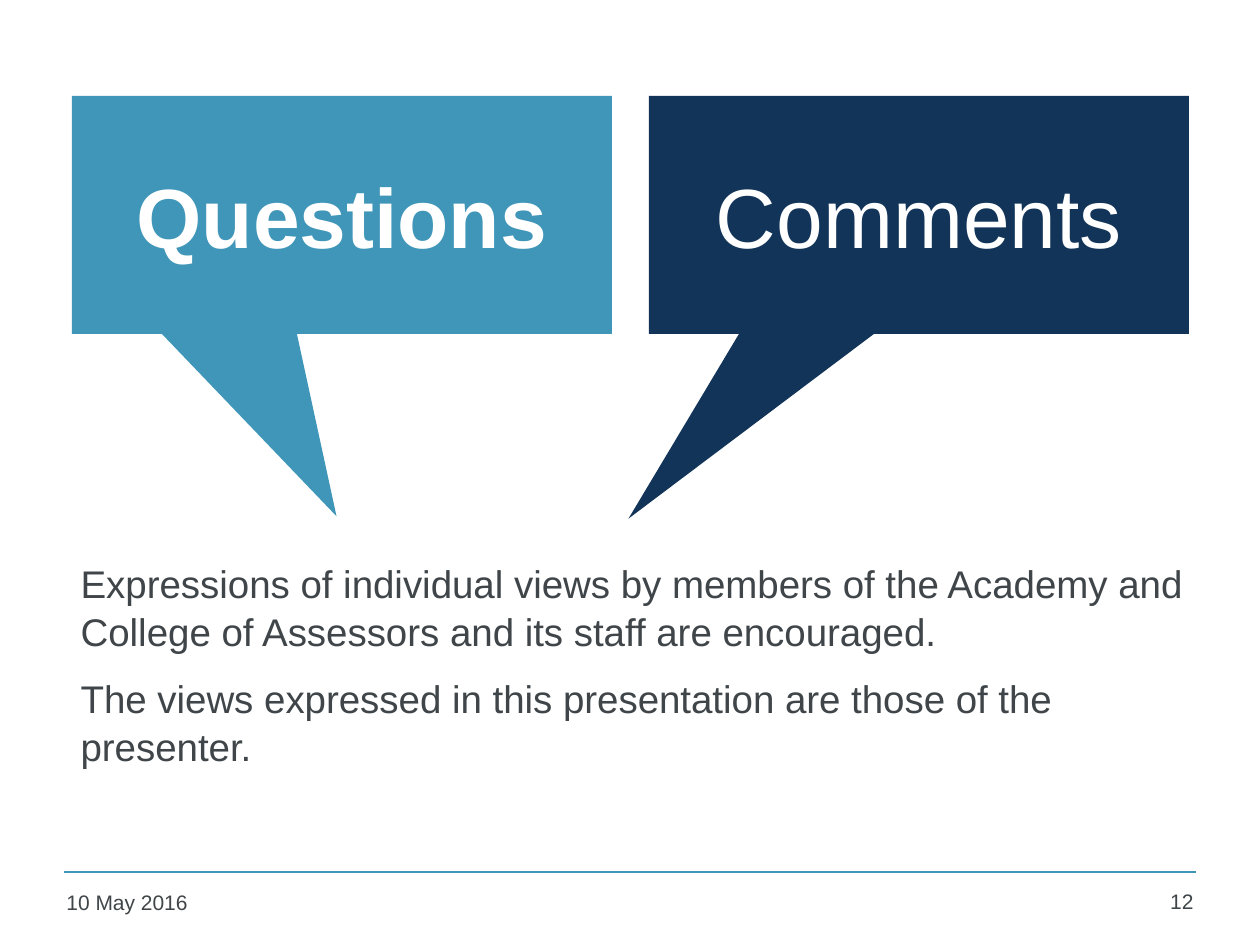
from dataclasses import dataclass

from lxml.etree import SubElement
from pptx import Presentation
from pptx.dml.color import RGBColor
from pptx.enum.shapes import MSO_CONNECTOR, MSO_SHAPE
from pptx.enum.text import MSO_ANCHOR as ANCHOR, MSO_AUTO_SIZE, PP_ALIGN as ALIGN
from pptx.oxml.ns import qn
from pptx.util import Inches, Pt

# Content
CALLOUTS = [
    {"text": "Questions", "bold": True, "fill": "teal", "tail": (-0.01, 1.266)},
    {"text": "Comments", "bold": False, "fill": "navy", "tail": (-0.538, 1.276)},
]
BODY = [
    "Expressions of individual views by members of the Academy and "
    "College of Assessors and its staff are encouraged.",
    "The views expressed in this presentation are those of the presenter.",
]
FOOTER = [
    ("10 May 2016", (54, 883, 277, 45), ALIGN.LEFT),
    ("12", (1116, 882, 90, 47), ALIGN.RIGHT),
]

# Geometry in px
SCALE = Inches(1) / 126
SLIDE = (1260, 945)
CALLOUT = (72, 96, 540, 238)
CALLOUT_STEP = 577
LABEL_INSET = (27, 40)
BODY_BOX = (68, 552, 1158, 325)
RULE = (64, 872, 1196, 872)


@dataclass(frozen=True)
class Theme:
    teal: str = "4096B8"
    navy: str = "113458"
    ink: str = "3F4548"
    white: str = "FFFFFF"
    font: str = "Arial"
    label: int = 48
    body: int = 22
    footer: int = 12


THEME = Theme()


def emu(*px):
    return [round(v * SCALE) for v in px]


def rgb(name):
    return RGBColor.from_string(getattr(THEME, name))


def place(sp, box):
    sp.left, sp.top, sp.width, sp.height = emu(*box)


def write(sp, lines, size, color, align=ALIGN.LEFT, anchor=ANCHOR.TOP, bold=False):
    tf = sp.text_frame
    tf.word_wrap = True
    tf.auto_size = MSO_AUTO_SIZE.NONE
    tf.vertical_anchor = anchor
    tf.text = "\n".join(lines)
    for p in tf.paragraphs:
        p.alignment = align
        p.font.name, p.font.size, p.font.bold = THEME.font, Pt(size), bold
        p.font.color.rgb = rgb(color)
    return tf


prs = Presentation()
prs.slide_width, prs.slide_height = emu(*SLIDE)
s = prs.slides.add_slide(prs.slide_layouts[1])
title, body = s.placeholders

# Footer rule, date and slide number
rule = s.shapes.add_connector(MSO_CONNECTOR.STRAIGHT, *emu(*RULE))
rule.line.color.rgb = rgb("teal")
rule.line.width = Pt(1)
SubElement(rule._element.spPr, qn("a:effectLst"))
for text, box, align in FOOTER:
    write(s.shapes.add_textbox(*emu(*box)), [text], THEME.footer, "ink", align)

# Body statements, without bullets
place(body, BODY_BOX)
for p in write(body, BODY, THEME.body, "ink").paragraphs:
    p.space_before = Pt(THEME.body / 2)
    p.line_spacing = 1.04
    pPr = p._p.get_or_add_pPr()
    pPr.set("marL", "0")
    pPr.set("indent", "0")
    pPr.insert_element_before(pPr.makeelement(qn("a:buNone")), "a:defRPr")

# Speech callouts, each with a label in front; the first label is the title
x, y, w, h = CALLOUT
dx, dy = LABEL_INSET
for i, item in enumerate(CALLOUTS):
    left = x + i * CALLOUT_STEP
    callout = s.shapes.add_shape(MSO_SHAPE.RECTANGULAR_CALLOUT, *emu(left, y, w, h))
    callout.shadow.inherit = False
    callout.fill.solid()
    callout.fill.fore_color.rgb = rgb(item["fill"])
    callout.line.fill.background()
    callout.adjustments[0], callout.adjustments[1] = item["tail"]

    label = title if i == 0 else s.shapes.add_textbox(0, 0, 0, 0)
    s.shapes._spTree.append(label._element)
    place(label, (left + dx, y + dy, w - 2 * dx, h - 2 * dy))
    write(label, [item["text"]], THEME.label, "white", ALIGN.CENTER,
          ANCHOR.MIDDLE, item["bold"])

prs.save("out.pptx")
